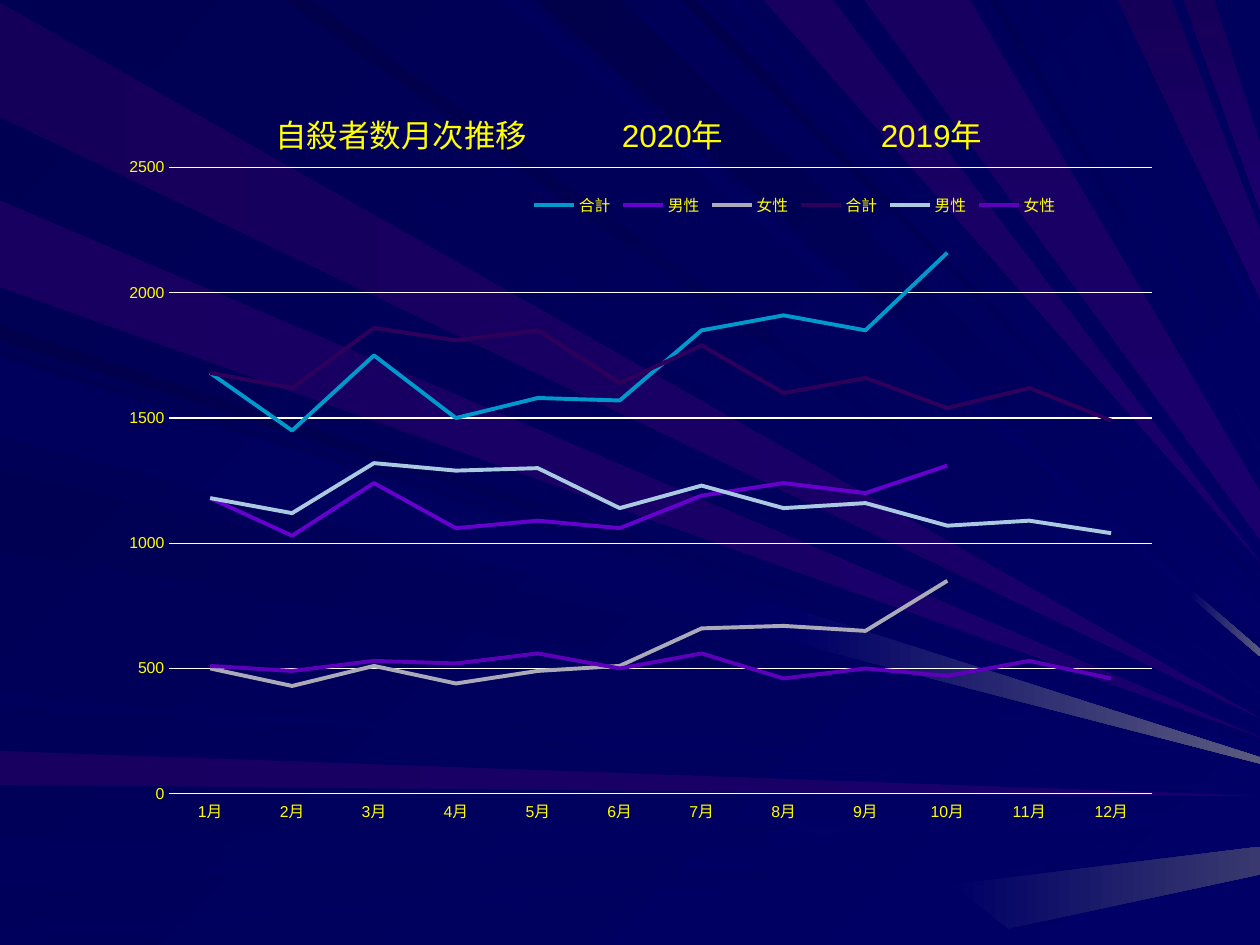
from lxml.etree import SubElement
from pptx import Presentation
from pptx.chart.data import CategoryChartData
from pptx.dml.color import RGBColor
from pptx.enum.chart import XL_CHART_TYPE as ChartType
from pptx.enum.chart import XL_LEGEND_POSITION as LegendPosition
from pptx.enum.chart import XL_TICK_MARK as TickMark
from pptx.oxml.ns import qn
from pptx.util import Cm, Pt

COLORS = {
    "navy": "000066", "navy_deep": "00004B", "navy_dark": "000052", "navy_dim": "00005C",
    "plum": "1A006C", "plum_dark": "150059", "plum_dim": "170060",
    "haze": "39396F", "glow": "5A5A7F",
    "text": "FFFF00", "rule": "FFFFFF",
    "total_2020": "0099CC", "men_2020": "6600CC", "women_2020": "AAAAB8",
    "total_2019": "2E005C", "men_2019": "AACAE2", "women_2019": "5C00B9",
}
FONT = "Arial"
RIGHT = 100  # right edge of the slide in tenths of an inch

# Rays from the left or top edge to the right edge, in tenths of an inch:
# shade, edge, both ends on that edge, then one or two heights on the right
RAYS = [
    ("plum_dark", "left", 0.2, 9.3, 57),
    ("navy_dark", "top", 2.6, 10.1, 56.3),
    ("plum_dim", "left", 59.6, 62.3, 63.2),
    ("navy_dim", "left", 66.5, 70.4, 64.3, 65.1),
    ("navy_dim", "left", 73.5, 75, 66.2),
    ("navy_deep", "left", 25.8, 27, 58.9),
    ("plum_dim", "left", 15.9, 22.8, 58.5),
    ("navy_dim", "top", 39.8, 41.6, 52.1, 51.5),
    ("navy_deep", "top", 42.6, 49.2, 50.7, 47.9),
    ("navy_deep", "top", 54, 55.2, 46.3),
    ("plum_dim", "top", 60.6, 66.1, 44.6),
    ("plum_dark", "top", 88.7, 93, 23.7, 18.3),
    ("plum_dark", "top", 93.9, 96.4, 16.7, 11.4),
    ("navy_dark", "left", 27.8, 34.2, 59.6, 60.2),
    ("navy_dark", "left", 37.4, 43.7, 60.6),
    ("navy_dim", "left", 55.2, 56, 62.2),
    ("navy_deep", "top", 22.5, 24.7, 55.2, 54.7),
    ("navy_dim", "top", 57.7, 58.8, 45.4),
    ("plum_dim", "top", 68.6, 77, 42.8, 39),
    ("navy_dark", "top", 78.5, 79.2, 36, 35.4),
    ("navy_dim", "top", 81.5, 82.4, 33.6),
    ("navy_dim", "top", 86.5, 87.2, 25.8, 24.9),
    ("navy_dim", "left", 28.3, 34.7, 60.1, 60.6),
]
# Lighter ray ends near the right edge
GLINTS = [
    ("haze", [(RIGHT, 69.4), (RIGHT, 67.2), (75.6, 70.2), (80, 73.7)]),
    ("glow", [(RIGHT, 60.6), (RIGHT, 60.1), (63.7, 48.5), (63.3, 51.1)]),
    ("glow", [(RIGHT, 52.1), (RIGHT, 51.5), (94.7, 46.9), (94.4, 47.3)]),
]

GAP = "　"
TITLE = f"自殺者数月次推移{GAP * 3}2020年{GAP * 5}2019年"
MONTHS = [f"{month}月" for month in range(1, 13)]
SERIES = [
    ("合計", "total_2020", [1680, 1450, 1750, 1500, 1580, 1570, 1850, 1910, 1850, 2160]),
    ("男性", "men_2020", [1180, 1030, 1240, 1060, 1090, 1060, 1190, 1240, 1200, 1310]),
    ("女性", "women_2020", [500, 430, 510, 440, 490, 510, 660, 670, 650, 850]),
    ("合計", "total_2019",
     [1680, 1620, 1860, 1810, 1850, 1640, 1790, 1600, 1660, 1540, 1620, 1490]),
    ("男性", "men_2019",
     [1180, 1120, 1320, 1290, 1300, 1140, 1230, 1140, 1160, 1070, 1090, 1040]),
    ("女性", "women_2019", [510, 490, 530, 520, 560, 500, 560, 460, 500, 470, 530, 460]),
]


def rgb(name):
    return RGBColor.from_string(COLORS[name])


def paint(fill, first, last, angle):
    """Fill with a gradient turned clockwise by angle."""
    fill.gradient()
    fill.gradient_angle = (360 - angle) % 360
    for stop, name in zip(fill.gradient_stops, (first, last)):
        stop.color.rgb = rgb(name)


def add_band(slide, corners, first, last, angle):
    points = [(round(x * 10), round(y * 10)) for x, y in corners]
    outline = slide.shapes.build_freeform(*points[0], scale=Cm(0.0254))
    outline.add_line_segments(points[1:], close=True)
    band = outline.convert_to_shape()
    paint(band.fill, first, last, angle)
    band.line.fill.background()
    band.shadow.inherit = False


def add_ray(slide, shade, edge, near, far, *tips):
    base = [(0, far), (0, near)] if edge == "left" else [(far, 0), (near, 0)]
    family = shade.split("_")[0]
    angle = 45 if family == "navy" else 0 if edge == "left" else 90
    add_band(slide, base + [(RIGHT, tip) for tip in tips], shade, family, angle)


def style_font(font, size):
    for name, value in {"size": Pt(size), "name": FONT, "bold": False}.items():
        setattr(font, name, value)
    font.color.rgb = rgb("text")


def style_line(line, color, width):
    line.color.rgb = rgb(color)
    line.width = Pt(width)


def place(chart, tag, index, **fractions):
    """Give a chart part a manual layout in fractions of the chart area."""
    part = chart.element.find(f".//{qn(tag)}")
    for old in part.findall(qn("c:layout")):
        part.remove(old)
    layout = part.makeelement(qn("c:layout"))
    part.insert(index, layout)
    manual = SubElement(layout, qn("c:manualLayout"))
    if tag == "c:plotArea":
        SubElement(manual, qn("c:layoutTarget")).set("val", "inner")
    for key in ("x", "y"):
        SubElement(manual, qn(f"c:{key}Mode")).set("val", "edge")
    for key, value in fractions.items():
        SubElement(manual, qn(f"c:{key}")).set("val", str(value))


def style_axes(chart):
    for axis in (chart.category_axis, chart.value_axis):
        axis.major_tick_mark = axis.minor_tick_mark = TickMark.NONE
        style_font(axis.tick_labels.font, 9)
    style_line(chart.category_axis.format.line, "rule", 0.75)
    counts = chart.value_axis
    for name, value in {"minimum_scale": 0, "maximum_scale": 2500, "major_unit": 500}.items():
        setattr(counts, name, value)
    counts.format.line.fill.background()
    style_line(counts.major_gridlines.format.line, "rule", 0.75)


def add_monthly_chart(slide):
    data = CategoryChartData()
    data.categories = MONTHS
    for name, _, counts in SERIES:
        data.add_series(name, counts + [None] * (len(MONTHS) - len(counts)))
    chart = slide.shapes.add_chart(
        ChartType.LINE, Cm(0.71), Cm(1.22), Cm(22.53), Cm(16.61), data).chart
    style_font(chart.font, 10)
    chart.plots[0].vary_by_categories = False
    for series, (_, color, _) in zip(chart.plots[0].series, SERIES):
        series.smooth = False
        style_line(series.format.line, color, 2.25)
    style_axes(chart)

    # Title and legend
    chart.has_title = True
    heading = chart.chart_title.text_frame
    heading.text = TITLE
    style_font(heading.paragraphs[0].runs[0].font, 18)
    chart.has_legend = True
    chart.legend.position = LegendPosition.BOTTOM
    chart.legend.include_in_layout = False
    style_font(chart.legend.font, 9)

    place(chart, "c:title", 1, x=0.21, y=0.05)
    place(chart, "c:plotArea", 0, x=0.12, y=0.13, w=0.88, h=0.76)
    place(chart, "c:legend", 1, x=0.44, y=0.15, w=0.48, h=0.05)


def main():
    deck = Presentation()
    deck.slide_width, deck.slide_height = Cm(25.4), Cm(19.05)
    slide = deck.slides.add_slide(deck.slide_layouts[6])

    # Background
    paint(slide.background.fill, "navy_dark", "navy", 45)
    for ray in RAYS:
        add_ray(slide, *ray)
    for shade, corners in GLINTS:
        add_band(slide, corners, "navy", shade, 0)

    # Monthly figures
    add_monthly_chart(slide)
    deck.save("out.pptx")


if __name__ == "__main__":
    main()
